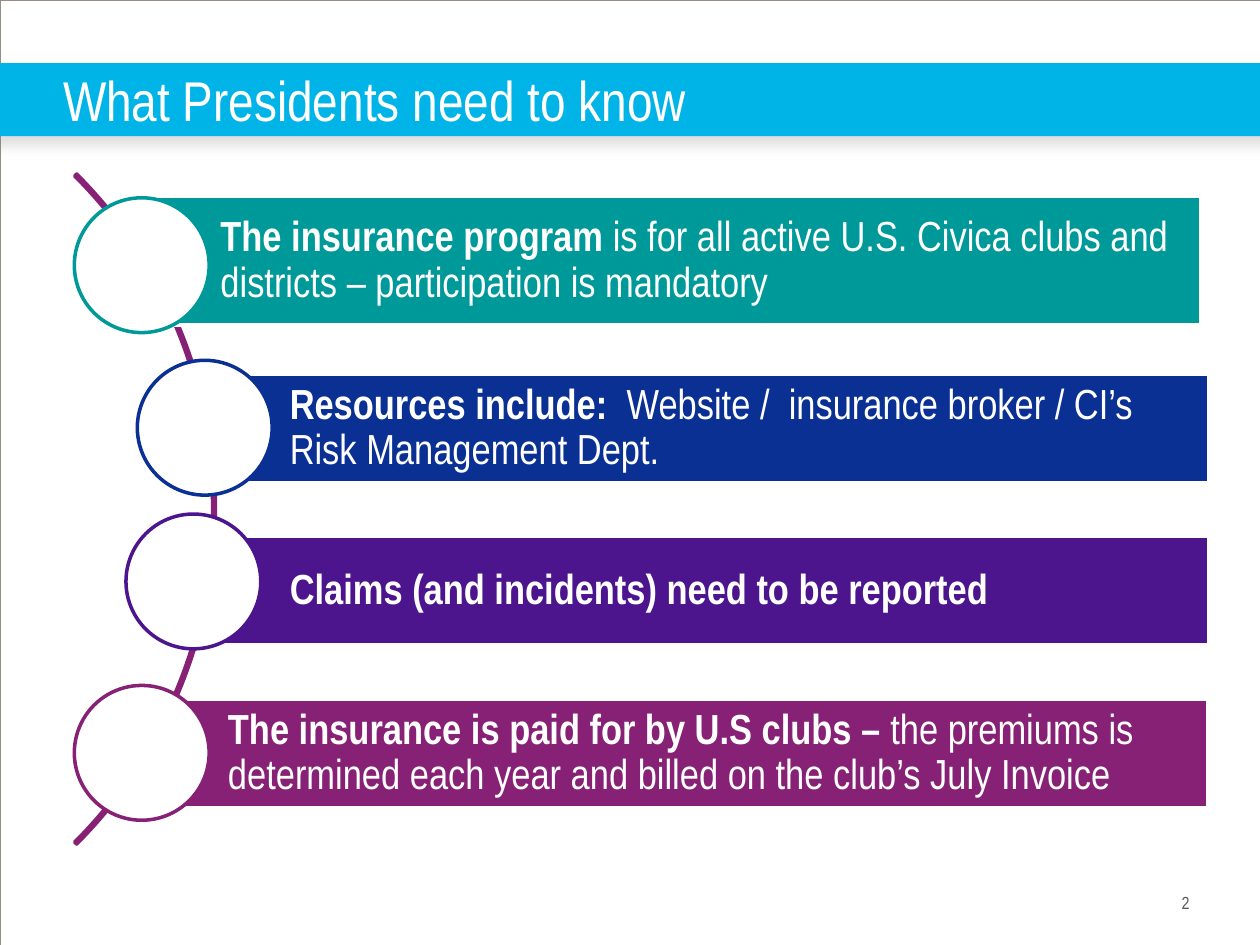
from dataclasses import dataclass

from lxml import etree
from pptx import Presentation, util as u
from pptx.dml.color import RGBColor
from pptx.enum import shapes, text
from pptx.oxml.ns import qn


@dataclass(frozen=True)
class Theme:
    """Colours, type sizes and font of the deck."""
    font: str = "Arial Narrow"
    white: str = "FFFFFF"
    sky: str = "01B4E7"
    grey: str = "58585A"
    edge: str = "958D85"
    shade: str = "808080"
    teal: str = "009999"
    navy: str = "0A3094"
    violet: str = "4C158E"
    plum: str = "872175"
    head: int = 32
    body: int = 24
    foot: int = 10


T = Theme()
KIND = shapes.MSO_SHAPE
MID = text.MSO_ANCHOR.MIDDLE
LEFT, RIGHT = text.PP_ALIGN.LEFT, text.PP_ALIGN.RIGHT
WIDE, TALL = 10, 7.5
COLS, ROWS = 100, 75
DISC = 10.7
ITEMS = [
    ((10.7, 15.6, 84.6, 10.2), (-4.8, 0.1), T.teal, "The insurance program ",
     "is for all active U.S. Civica clubs and districts – participation is mandatory"),
    ((16.2, 29.7, 79.7, 8.6), (-5.3, -1.1), T.navy, "Resources include:  ",
     "Website /  insurance broker / CI’s Risk Management Dept."),
    ((16.2, 42.6, 79.7, 8.6), (-6.2, -1.8), T.violet,
     "Claims (and incidents) need to be reported", ""),
    ((11.3, 55.5, 84.6, 8.6), (-5.4, -1.1), T.plum,
     "The insurance is paid for by U.S clubs – ",
     "the premiums is determined each year and billed on the club’s July Invoice"),
]


def grid(box):
    """Turn columns and rows into slide lengths."""
    x, y, w, h = box
    col, row = WIDE / COLS, TALL / ROWS
    return [u.Inches(n) for n in (x * col, y * row, w * col, h * row)]


def draw(slide, kind, box, fill=None, line=None, width=2):
    """Add a preset shape with plain fill and line."""
    form = slide.shapes.add_shape(kind, *grid(box))
    form.shadow.inherit = False
    if fill:
        form.fill.solid()
        form.fill.fore_color.rgb = RGBColor.from_string(fill)
    else:
        form.fill.background()
    if line:
        form.line.color.rgb = RGBColor.from_string(line)
        form.line.width = u.Pt(width)
    else:
        form.line.fill.background()
    return form


def write(form, *runs, size, color=T.white, align=LEFT, anchor=MID,
          inset=(0, 0, 0, 0), lead=1.0):
    """Fill a shape with one paragraph of (words, bold) runs."""
    frame = form.text_frame
    frame.word_wrap = True
    frame.auto_size = text.MSO_AUTO_SIZE.NONE
    frame.vertical_anchor = anchor
    (frame.margin_left, frame.margin_top,
     frame.margin_right, frame.margin_bottom) = [u.Inches(n) for n in inset]
    para = frame.paragraphs[0]
    para.alignment = align
    para.line_spacing = lead
    for words, bold in runs:
        if words:
            run = para.add_run()
            run.text = words
            run.font.name = T.font
            run.font.size = u.Pt(size)
            run.font.bold = bold
            run.font.color.rgb = RGBColor.from_string(color)


def shade(form):
    """Cast a soft shadow below a shape."""
    fx = form._element.spPr.find(qn("a:effectLst"))
    cast = etree.SubElement(fx, qn("a:outerShdw"), blurRad=str(u.Pt(7)),
                            dist=str(u.Pt(4.8)), dir="5400000",
                            algn="t", rotWithShape="0")
    tint = etree.SubElement(cast, qn("a:srgbClr"), val=T.shade)
    etree.SubElement(tint, qn("a:alpha"), val="25000")


def header(slide, box, words):
    """Place the banner and the title over it."""
    x, y, w, h = box
    shade(draw(slide, KIND.RECTANGLE, (x - 0.8, y, w + 1.7, h), T.sky))
    title = slide.shapes.title
    title.left, title.top, title.width, title.height = grid((x + 5, y, w - 5, h))
    slide.shapes._spTree.append(title._element)
    write(title, (words, False), size=T.head)


def arc(slide, box):
    """Place the thin curve that links the discs."""
    curve = draw(slide, KIND.BLOCK_ARC, box, line=T.plum)
    for i, val in enumerate((189, 27, 0.003)):
        curve.adjustments[i] = val


def item(slide, box, shift, color, lead, rest):
    """Place one bar of text and the disc at its left."""
    bar = draw(slide, KIND.RECTANGLE, box, color, T.white)
    write(bar, (lead, True), (rest, False), size=T.body,
          inset=(0.68, 0.07, 0.07, 0.07), lead=0.9)
    spot = (box[0] + shift[0], box[1] + shift[1], DISC, DISC)
    draw(slide, KIND.OVAL, spot, T.white, color)


def footer(slide, box, words):
    """Place the page number."""
    note = slide.shapes.add_textbox(*grid(box))
    write(note, (words, False), size=T.foot, color=T.grey, align=RIGHT,
          anchor=text.MSO_ANCHOR.TOP)


def main():
    """Build and save the slide."""
    deck = Presentation()
    deck.slide_width, deck.slide_height = u.Inches(WIDE), u.Inches(TALL)
    slide = deck.slides.add_slide(deck.slide_layouts[5])
    footer(slide, (77.5, 70.8, 16.9, 1.7), "2")
    draw(slide, KIND.RECTANGLE, (0, 0, COLS, ROWS), line=T.edge, width=0.13)
    header(slide, (0, 5, COLS, 5.8), "What Presidents need to know")
    arc(slide, (-58.1, 2.8, 75.2, 75.2))
    for parts in ITEMS:
        item(slide, *parts)
    deck.save("out.pptx")


if __name__ == "__main__":
    main()
